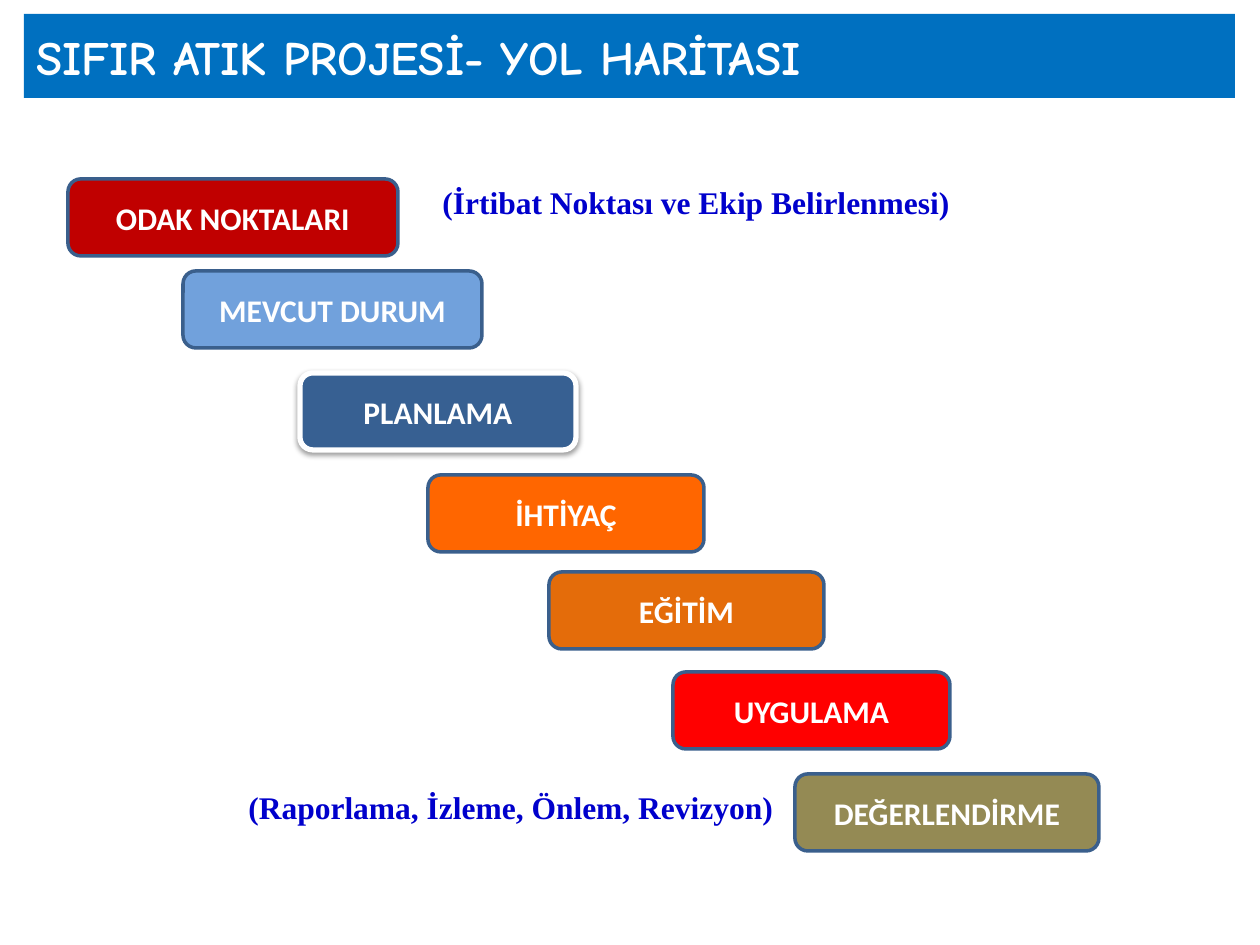
from pptx import Presentation
from pptx.dml.color import RGBColor
from pptx.enum.shapes import MSO_SHAPE
from pptx.enum.text import MSO_ANCHOR, MSO_AUTO_SIZE, PP_ALIGN
from pptx.oxml import parse_xml
from pptx.oxml.ns import nsdecls, qn
from pptx.util import Emu, Pt

COLORS = {
    "white": "FFFFFF", "banner": "0070C0", "outline": "3A5F8C", "note": "0000CC",
    "crimson": "C00000", "sky": "71A1DC", "navy": "376092", "orange": "FF6600",
    "amber": "E46C0A", "red": "FF0000", "olive": "948A54",
}
PX_PER_INCH = 126
STEP_HEIGHT = 77
STEPS = [
    ("ODAK NOKTALARI", 68, 179, 330, "crimson"),
    ("MEVCUT DURUM", 183, 271, 299, "sky"),
    ("PLANLAMA", 300, 373, 276, "navy"),
    ("İHTİYAÇ", 428, 475, 276, "orange"),
    ("EĞİTİM", 549, 572, 275, "amber"),
    ("UYGULAMA", 673, 672, 277, "red"),
    ("DEĞERLENDİRME", 795, 774, 304, "olive"),
]
RAISED_STEP = "PLANLAMA"


def px(length):
    return Emu(round(length * 914400 / PX_PER_INCH))


def rgb(color):
    return RGBColor.from_string(COLORS[color])


def write(frame, text, font="Calibri", size=18, color="white", align=PP_ALIGN.LEFT,
          anchor=MSO_ANCHOR.MIDDLE, wrap=True):
    frame.word_wrap = wrap
    frame.vertical_anchor = anchor
    paragraph = frame.paragraphs[0]
    paragraph.alignment = align
    run = paragraph.add_run()
    run.text = text
    run.font.name = font
    run.font.size = Pt(size)
    run.font.bold = True
    run.font.color.rgb = rgb(color)


class RoadmapSlide:
    """Draws the banner, steps and notes of a roadmap on one slide."""

    def __init__(self, slide):
        self.slide = slide

    def block(self, preset, left, top, width, height, fill):
        block = self.slide.shapes.add_shape(
            preset, px(left), px(top), px(width), px(height))
        block.shadow.inherit = False
        block.fill.solid()
        block.fill.fore_color.rgb = rgb(fill)
        return block

    def banner(self, text, left, top, width, height):
        banner = self.block(MSO_SHAPE.RECTANGLE, left, top, width, height, "banner")
        banner.line.fill.background()
        write(banner.text_frame, text, font="Comic Neue", size=27.3)

    def step(self, text, left, top, width, fill, raised=False):
        step = self.block(MSO_SHAPE.ROUNDED_RECTANGLE, left, top, width, STEP_HEIGHT, fill)
        step.line.color.rgb = rgb("white" if raised else "outline")
        step.line.width = Pt(3 if raised else 2)
        if raised:
            self.cast_shadow(step)
        write(step.text_frame, text, align=PP_ALIGN.CENTER)

    def cast_shadow(self, step):
        step._element.spPr.find(qn("a:effectLst")).append(parse_xml(
            f'<a:outerShdw {nsdecls("a")} blurRad="{Pt(3.1)}" dist="{Pt(1.6)}" '
            'dir="5400000" rotWithShape="0"><a:srgbClr val="000000">'
            '<a:alpha val="38000"/></a:srgbClr></a:outerShdw>'))

    def note(self, text, left, top, width, height, wrap=True):
        note = self.slide.shapes.add_textbox(px(left), px(top), px(width), px(height))
        note.text_frame.auto_size = MSO_AUTO_SIZE.SHAPE_TO_FIT_TEXT
        write(note.text_frame, text, font="Times New Roman", color="note",
              anchor=MSO_ANCHOR.TOP, wrap=wrap)


def main():
    deck = Presentation()
    deck.slide_width, deck.slide_height = px(1260), px(945)
    roadmap = RoadmapSlide(deck.slides.add_slide(deck.slide_layouts[6]))
    roadmap.banner("SIFIR ATIK PROJESİ- YOL HARİTASI", 24, 14, 1211, 84)
    for label, left, top, width, fill in STEPS:
        roadmap.step(label, left, top, width, fill, raised=label == RAISED_STEP)
    roadmap.note("(Raporlama, İzleme, Önlem, Revizyon)", 236, 782, 585, 50)
    roadmap.note("(İrtibat Noktası ve Ekip Belirlenmesi)", 430, 177, 538, 50, wrap=False)
    deck.save("out.pptx")


if __name__ == "__main__":
    main()
